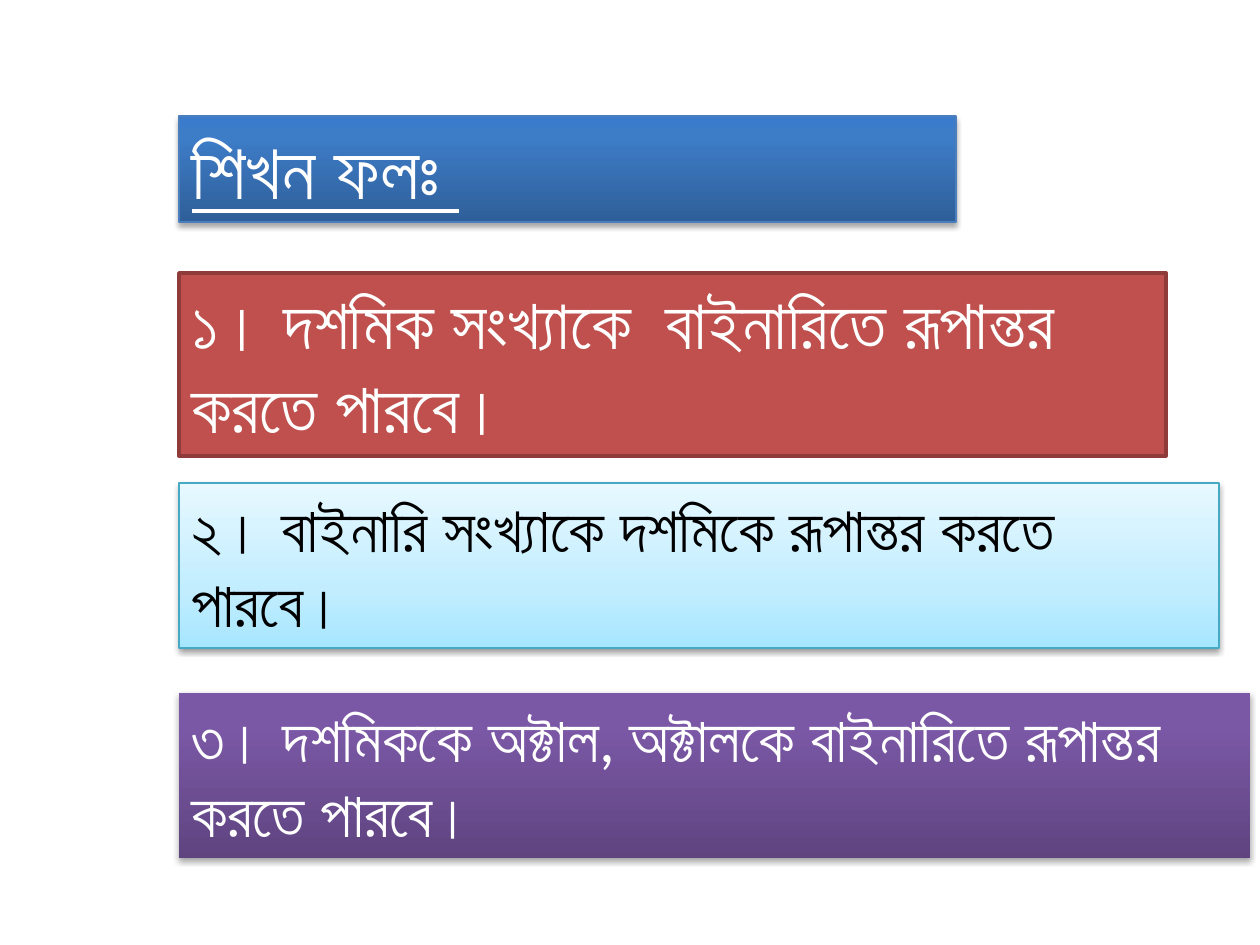
from lxml import etree
from pptx import Presentation
from pptx.dml.color import RGBColor
from pptx.enum.shapes import MSO_SHAPE
from pptx.enum.text import MSO_ANCHOR, MSO_AUTO_SIZE, PP_ALIGN
from pptx.oxml.ns import qn
from pptx.util import Emu, Pt

RECT = MSO_SHAPE.RECTANGLE
TOP = MSO_ANCHOR.TOP
LEFT = PP_ALIGN.LEFT
GROW = MSO_AUTO_SIZE.SHAPE_TO_FIT_TEXT
SCALE = 914400 / 126
TITLE_ONLY = 5

COLORS = {
    "white": "FFFFFF", "black": "000000",
    "blue_dark": "2F5F99", "blue": "3D7CC7", "blue_light": "3A7CCB", "blue_line": "4B7EBC",
    "red": "C0504D", "red_line": "8E3B39",
    "aqua_dark": "A7E6FF", "aqua": "C1EDFF", "aqua_light": "E7F8FF", "aqua_line": "46AAC5",
    "purple_dark": "5F4480", "purple": "7B58A6", "purple_light": "7C57A8",
}
BLUE = [(0, "blue_dark"), (80, "blue"), (100, "blue_light")]
AQUA = [(0, "aqua_dark"), (35, "aqua"), (100, "aqua_light")]
PURPLE = [(0, "purple_dark"), (80, "purple"), (100, "purple_light")]


def px(n):
    """Turn px into EMU."""
    return Emu(round(n * SCALE))


def rgb(name):
    """Look up a named colour."""
    return RGBColor.from_string(COLORS[name])


class Deck:
    """Holds the style and the current slide."""

    font = "Calibri"
    frame = {"word_wrap": True, "auto_size": GROW, "vertical_anchor": TOP}

    def __init__(self, prs):
        """Add the slide to draw on."""
        self.slide = prs.slides.add_slide(prs.slide_layouts[TITLE_ONLY])

    def color_xml(self, parent, name):
        """Append a colour element and return it."""
        return etree.SubElement(parent, qn("a:srgbClr"), val=COLORS[name])

    def gradient(self, sp, stops):
        """Fill a shape with stops running from bottom to top."""
        sp.fill.gradient()
        sp.fill.gradient_angle = 90
        stop_list = sp._element.spPr.find(".//" + qn("a:gsLst"))
        for stop in list(stop_list):
            stop_list.remove(stop)
        for pos, name in stops:
            stop = etree.SubElement(stop_list, qn("a:gs"), pos=str(pos * 1000))
            self.color_xml(stop, name)

    def shadow(self, sp, alpha, dist):
        """Drop a soft shadow straight below a shape."""
        effects = sp._element.spPr.find(qn("a:effectLst"))
        outer = etree.SubElement(effects, qn("a:outerShdw"), blurRad=str(Pt(3.1)),
                                 dist=str(Pt(dist)), dir="5400000", rotWithShape="0")
        color = self.color_xml(outer, "black")
        etree.SubElement(color, qn("a:alpha"), val=str(alpha * 1000))

    def style(self, sp, fill, line, shadow):
        """Set the fill, outline and shadow of a shape."""
        sp.shadow.inherit = False
        if isinstance(fill, str):
            sp.fill.solid()
            sp.fill.fore_color.rgb = rgb(fill)
        else:
            self.gradient(sp, fill)
        if line:
            name, width = line
            sp.line.color.rgb = rgb(name)
            sp.line.width = Pt(width)
        else:
            sp.line.fill.background()
        if shadow:
            self.shadow(sp, *shadow)

    def text(self, sp, text, size, color, underline=None):
        """Write one left-aligned paragraph in a shape."""
        tf = sp.text_frame
        for key, value in self.frame.items():
            setattr(tf, key, value)
        p = tf.paragraphs[0]
        p.alignment = LEFT
        r = p.add_run()
        r.text = text
        for key, value in {"name": self.font, "size": Pt(size), "underline": underline}.items():
            setattr(r.font, key, value)
        r.font.color.rgb = rgb(color)

    def title(self, box, text, size, color, fill, line, shadow):
        """Place and format the title placeholder."""
        sp = self.slide.shapes.title
        for key, value in zip(("left", "top", "width", "height"), box):
            setattr(sp, key, px(value))
        self.style(sp, fill, line, shadow)
        self.text(sp, text, size, color, underline=True)

    def outcome(self, box, text, size, color, fill, line, shadow):
        """Add a filled box with one learning outcome."""
        sp = self.slide.shapes.add_shape(RECT, *map(px, box))
        self.style(sp, fill, line, shadow)
        self.text(sp, text, size, color)


def main():
    """Build the learning outcomes slide."""
    prs = Presentation()
    prs.slide_width, prs.slide_height = px(1260), px(945)
    deck = Deck(prs)
    deck.title((179, 116, 777, 106), "শিখন ফলঃ ", 44, "white",
               BLUE, ("blue_line", 0.75), (35, 1.8))
    outcomes = [
        (987, 183, "১। দশমিক সংখ্যাকে  বাইনারিতে রূপান্তর করতে পারবে।", 40, "white",
         "red", ("red_line", 2), None),
        (1040, 165, "২। বাইনারি সংখ্যাকে দশমিকে রূপান্তর করতে পারবে।", 36, "black",
         AQUA, ("aqua_line", 0.75), (38, 1.6)),
        (1071, 165, "৩। দশমিককে অক্টাল, অক্টালকে বাইনারিতে রূপান্তর করতে পারবে।", 36, "white",
         PURPLE, None, (35, 1.8)),
    ]
    for i, (width, height, *details) in enumerate(outcomes):
        deck.outcome((179, 273 + 210 * i, width, height), *details)
    prs.save("out.pptx")


if __name__ == "__main__":
    main()
